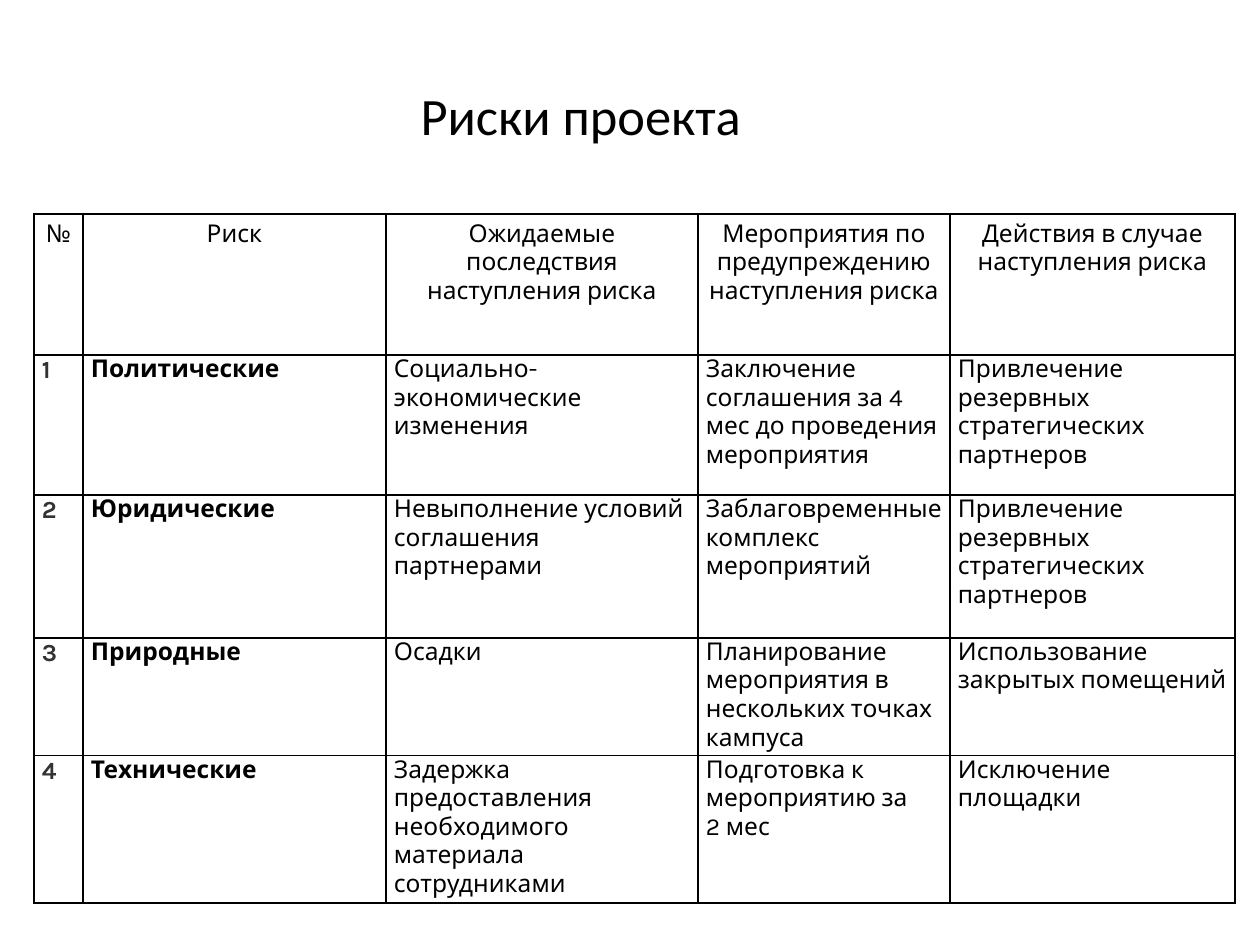
from lxml.etree import SubElement
from pptx import Presentation
from pptx.dml.color import RGBColor
from pptx.enum.text import MSO_ANCHOR as Anchor, PP_ALIGN as Align
from pptx.oxml.ns import qn
from pptx.util import Emu, Pt

EMU_PER_PX = 914400 / 126
BLACK = RGBColor(0x00, 0x00, 0x00)
DARK_GRAY = RGBColor(0x33, 0x33, 0x33)

COLUMN_WIDTHS = [49, 303, 312, 252, 285]
ROW_HEIGHTS = [141, 140, 143, 114, 143]
HEADERS = [
    "№",
    "Риск",
    "Ожидаемые последствия наступления риска",
    "Мероприятия по предупреждению наступления риска",
    "Действия в случае наступления риска",
]
RESERVE_PARTNERS = "Привлечение резервных стратегических партнеров"
RISKS = [
    ("Политические", "Социально-экономические изменения",
     "Заключение соглашения за 4 мес до проведения мероприятия", RESERVE_PARTNERS),
    ("Юридические", "Невыполнение условий соглашения партнерами",
     "Заблаговременные комплекс мероприятий", RESERVE_PARTNERS),
    ("Природные", "Осадки",
     "Планирование мероприятия в нескольких точках кампуса",
     "Использование закрытых помещений"),
    ("Технические", "Задержка предоставления необходимого материала сотрудниками",
     "Подготовка к мероприятию за\n2 мес", "Исключение площадки"),
]

TITLE_FONT = {"name": "Calibri", "size": Pt(30)}
BODY_FONT = {"name": "Karla", "size": Pt(14), "bold": False}
BOLD_FONT = {**BODY_FONT, "bold": True}


def px(length):
    return Emu(round(length * EMU_PER_PX))


def write_text(text_frame, text, font_format, color=BLACK, align=Align.LEFT):
    text_frame.text = text
    for paragraph in text_frame.paragraphs:
        paragraph.alignment = align
        for run in paragraph.runs:
            for name, value in font_format.items():
                setattr(run.font, name, value)
            run.font.color.rgb = color


def set_margins(target, left, top, right, bottom):
    margins = {"left": left, "top": top, "right": right, "bottom": bottom}
    for side, length in margins.items():
        setattr(target, f"margin_{side}", px(length))


def add_borders(cell):
    properties = cell._tc.get_or_add_tcPr()
    for side in ("lnL", "lnR", "lnT", "lnB"):
        line = SubElement(properties, qn(f"a:{side}"), w=str(Pt(1)))
        fill = SubElement(line, qn("a:solidFill"))
        SubElement(fill, qn("a:srgbClr"), val=str(BLACK))


def fill_cell(cell, text, margins, font_format, **text_options):
    add_borders(cell)
    cell.fill.background()
    cell.vertical_anchor = Anchor.TOP
    set_margins(cell, *margins)
    write_text(cell.text_frame, text, font_format, **text_options)


def add_title(slide, text):
    box = slide.shapes.add_textbox(px(14), px(76), px(1134), px(77))
    frame = box.text_frame
    frame.word_wrap = True
    frame.vertical_anchor = Anchor.MIDDLE
    write_text(frame, text, TITLE_FONT, align=Align.CENTER)


def add_risk_table(slide):
    frame = slide.shapes.add_table(
        len(ROW_HEIGHTS), len(COLUMN_WIDTHS), px(34), px(214),
        px(sum(COLUMN_WIDTHS)), px(sum(ROW_HEIGHTS)))
    table = frame.table
    table.first_row = table.horz_banding = False
    for column, width in zip(table.columns, COLUMN_WIDTHS):
        column.width = px(width)
    for row, height in zip(table.rows, ROW_HEIGHTS):
        row.height = px(height)

    for index, header in enumerate(HEADERS):
        fill_cell(table.cell(0, index), header, (10, 6, 10, 6), BODY_FONT,
                  align=Align.CENTER)
    for number, (risk, *details) in enumerate(RISKS, start=1):
        fill_cell(table.cell(number, 0), str(number), (8, 1, 8, 0), BOLD_FONT,
                  color=DARK_GRAY)
        fill_cell(table.cell(number, 1), risk, (8, 0, 8, 0), BOLD_FONT)
        for index, detail in enumerate(details, start=2):
            fill_cell(table.cell(number, index), detail, (8, 0, 8, 0), BODY_FONT)


def main():
    presentation = Presentation()
    presentation.slide_width = px(1260)
    presentation.slide_height = px(945)
    slide = presentation.slides.add_slide(presentation.slide_layouts[6])
    add_title(slide, "Риски проекта")
    add_risk_table(slide)
    presentation.save("out.pptx")


if __name__ == "__main__":
    main()
